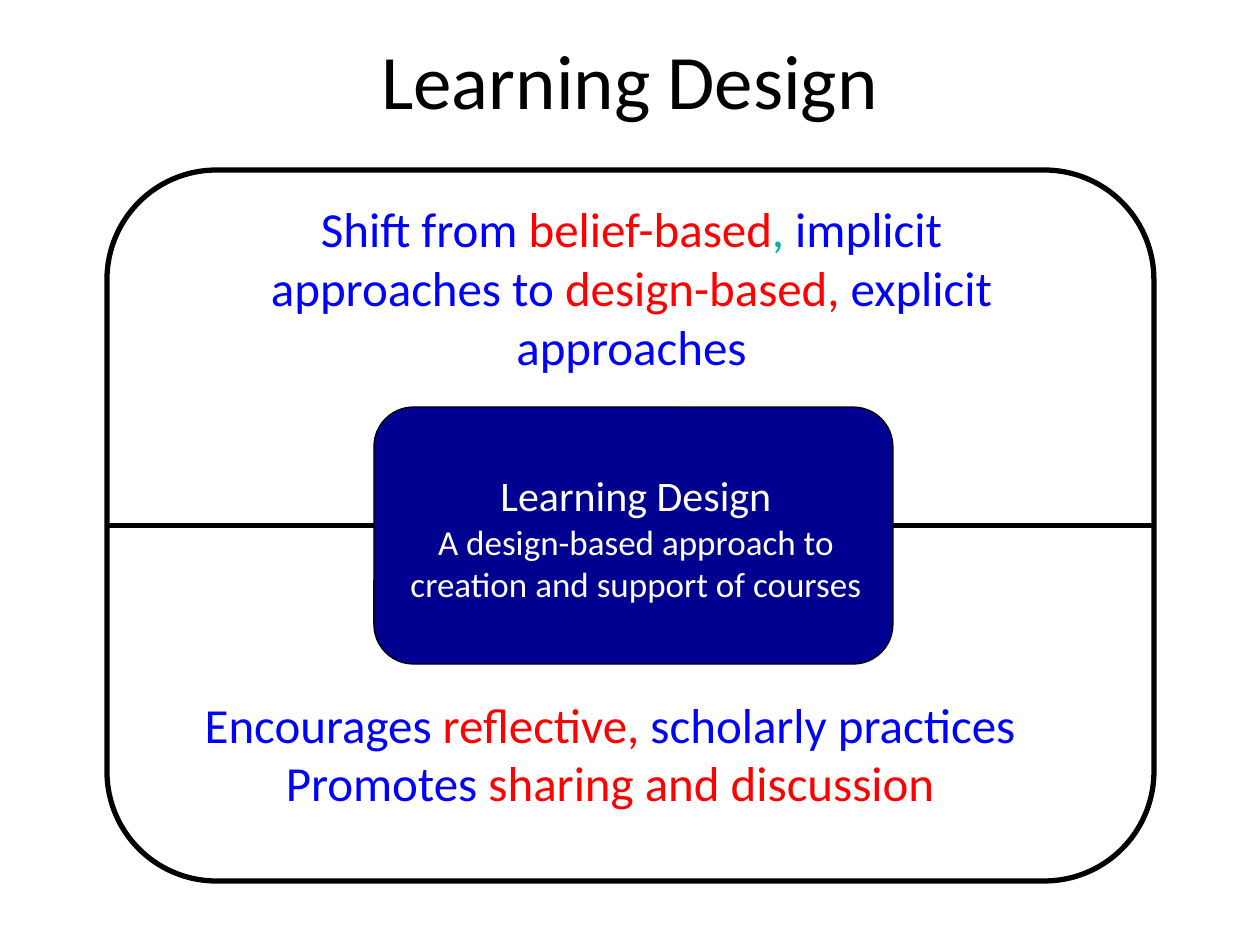
from typing import NamedTuple

from lxml.etree import SubElement
from pptx import Presentation
from pptx.dml.color import RGBColor as Rgb
from pptx.enum.shapes import MSO_CONNECTOR as Link, MSO_SHAPE as Kind
from pptx.enum.text import MSO_ANCHOR as Anchor, PP_ALIGN as Align
from pptx.oxml.ns import qn
from pptx.util import Emu, Pt

SCALE = 914400 / 126
FONT = "Calibri"
COLORS = {
    "black": "000000",
    "white": "FFFFFF",
    "blue": "0000FF",
    "red": "FF0000",
    "teal": "00AFAD",
    "navy": "000090",
}


class Area(NamedTuple):
    left: int
    top: int
    width: int
    height: int


class Span(NamedTuple):
    text: str
    color: str


class Line(NamedTuple):
    size: int
    spans: list[Span]


class Label(NamedTuple):
    area: Area
    lines: list[Line]
    anchor: Anchor = Anchor.TOP
    inset: int = 5


class Panel(NamedTuple):
    area: Area
    width: float
    fill: str | None = None


TITLE = Label(Area(63, 0, 1134, 158), [Line(44, [Span("Learning Design", "black")])],
              Anchor.MIDDLE, 12)
FRAME = Panel(Area(107, 170, 1047, 711), 3)
CORE = Panel(Area(374, 407, 519, 257), 0.75, "navy")
LABELS = [
    Label(Area(246, 194, 771, 179), [
        Line(28, [
            Span("Shift from ", "blue"),
            Span("belief-based", "red"),
            Span(", ", "teal"),
            Span("implicit approaches to ", "blue"),
            Span("design-based, ", "red"),
            Span("explicit approaches", "blue"),
        ]),
    ]),
    Label(Area(184, 689, 852, 122), [
        Line(28, [
            Span("Encourages ", "blue"),
            Span("reflective, ", "red"),
            Span("scholarly practices", "blue"),
        ]),
        Line(28, [Span("Promotes ", "blue"), Span("sharing and discussion", "red")]),
    ]),
    Label(Area(387, 465, 498, 144), [
        Line(24, [Span("Learning Design", "white")]),
        Line(20, [Span("A design-based approach to creation and support of courses",
                       "white")]),
    ], Anchor.MIDDLE),
]


def px(count: int) -> Emu:
    return Emu(round(count * SCALE))


def rgb(name: str) -> Rgb:
    return Rgb.from_string(COLORS[name])


def write(slide, label: Label) -> None:
    box = slide.shapes.add_textbox(*map(px, label.area))
    frame = box.text_frame
    frame.word_wrap = True
    frame.vertical_anchor = label.anchor
    frame.margin_left = frame.margin_right = px(label.inset)
    frame.margin_top = frame.margin_bottom = px(min(label.inset, 6))
    for i, line in enumerate(label.lines):
        para = frame.add_paragraph() if i else frame.paragraphs[0]
        para.alignment = Align.CENTER
        for span in line.spans:
            run = para.add_run()
            run.text = span.text
            run.font.name = FONT
            run.font.size = Pt(line.size)
            run.font.color.rgb = rgb(span.color)


def draw(slide, panel: Panel):
    shape = slide.shapes.add_shape(Kind.ROUNDED_RECTANGLE, *map(px, panel.area))
    shape.adjustments[0] = 0.154
    shape.shadow.inherit = False
    if panel.fill:
        shape.fill.solid()
        shape.fill.fore_color.rgb = rgb(panel.fill)
    else:
        shape.fill.background()
    shape.line.color.rgb = rgb("black")
    shape.line.width = Pt(panel.width)
    return shape


def split(slide, shape) -> None:
    """Halve a shape with a line joined to its left and right sides."""
    line = slide.shapes.add_connector(Link.STRAIGHT, 0, 0, 0, 0)
    line.begin_connect(shape, 1)
    line.end_connect(shape, 3)
    line.line.color.rgb = rgb("black")
    line.line.width = Pt(3)
    SubElement(line.element.spPr, qn("a:effectLst"))


def main() -> None:
    deck = Presentation()
    deck.slide_width, deck.slide_height = px(1260), px(945)
    slide = deck.slides.add_slide(deck.slide_layouts[6])
    write(slide, TITLE)
    split(slide, draw(slide, FRAME))
    draw(slide, CORE)
    for label in LABELS:
        write(slide, label)
    deck.save("out.pptx")


if __name__ == "__main__":
    main()
